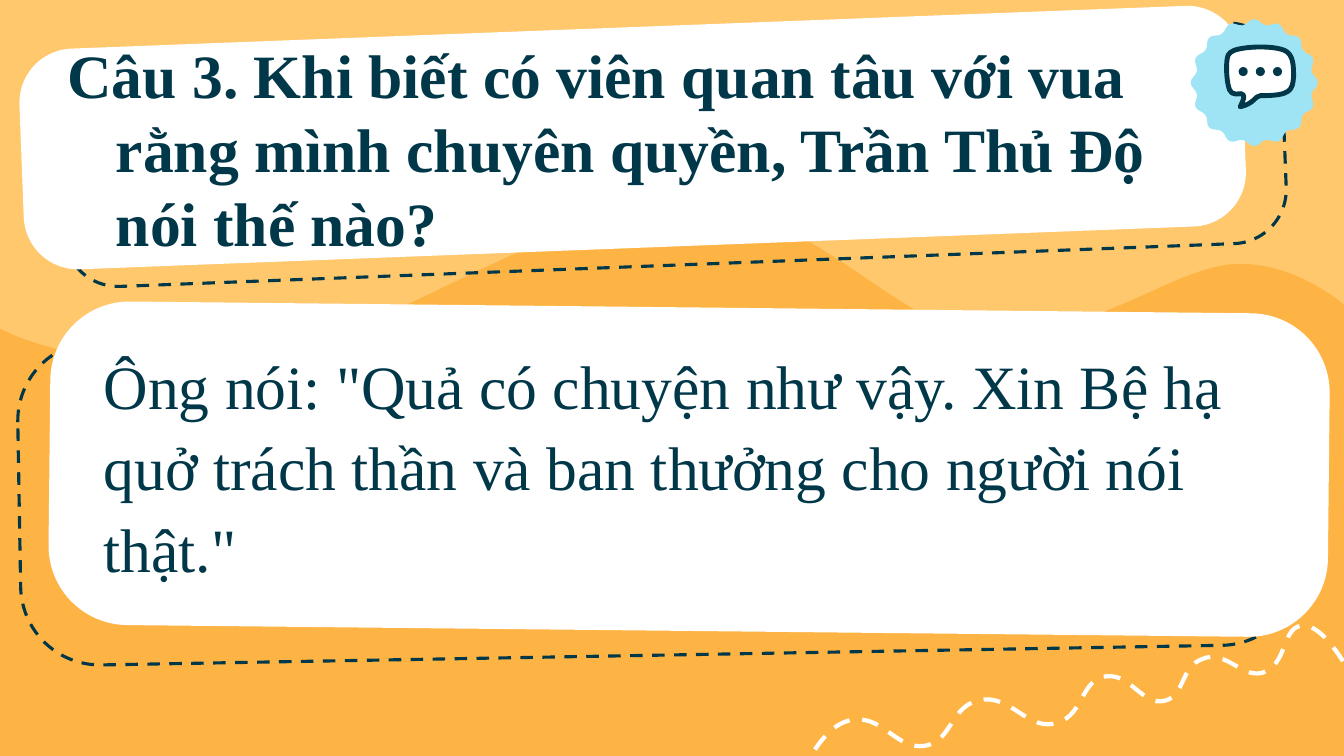
from math import cos, pi, sin

from lxml import etree
from pptx import Presentation
from pptx.dml.color import RGBColor
from pptx.enum.dml import MSO_LINE
from pptx.enum.shapes import MSO_SHAPE
from pptx.enum.text import MSO_ANCHOR
from pptx.oxml.ns import qn
from pptx.util import Inches, Pt

RECT, ROUND_RECT, OVAL = MSO_SHAPE.RECTANGLE, MSO_SHAPE.ROUNDED_RECTANGLE, MSO_SHAPE.OVAL
DASH = MSO_LINE.DASH
TOP, BOTTOM = MSO_ANCHOR.TOP, MSO_ANCHOR.BOTTOM

SAND = RGBColor(0xFF, 0xC8, 0x6D)
ORANGE = RGBColor(0xFE, 0xB4, 0x44)
NAVY = RGBColor(0x00, 0x38, 0x49)
SKY = RGBColor(0x9F, 0xE4, 0xF5)
WHITE = RGBColor(0xFF, 0xFF, 0xFF)

FONT = "Times New Roman"
WIDTH, HEIGHT = 13.33, 7.5

# Outlines: a start point, then (end) for a line or (control, control, end) for a curve
HILLS = [(6.81, 2.03),
         (5.43, 2.03, 3.58, 3.56, 2.16, 3.61), (2.06, 3.61, 1.97, 3.62, 1.89, 3.62),
         (0.64, 3.62, 0, 3.26, 0, 3.26), (0, 6.62), (WIDTH, 6.62), (WIDTH, 3.02),
         (13.33, 3.02, 12.86, 2.62, 12.33, 2.62), (12.29, 2.62, 12.25, 2.62, 12.22, 2.62),
         (11.64, 2.68, 11.11, 3.17, 10.06, 3.33), (10.01, 3.33, 9.95, 3.34, 9.9, 3.34),
         (8.92, 3.34, 8.12, 2.03, 6.81, 2.03)]
WAVE = [(13.32, 6.56),
        (13.2, 6.37, 13.04, 6.18, 12.9, 6.21), (12.73, 6.23, 12.76, 6.56, 12.56, 6.66),
        (12.33, 6.77, 12.17, 6.43, 11.92, 6.54), (11.71, 6.62, 11.75, 6.9, 11.56, 6.95),
        (11.34, 7.02, 11.22, 6.68, 10.97, 6.71), (10.72, 6.74, 10.75, 7.09, 10.49, 7.17),
        (10.19, 7.27, 10.03, 6.87, 9.7, 6.95), (9.42, 7.02, 9.44, 7.36, 9.17, 7.4),
        (8.9, 7.44, 8.76, 7.11, 8.48, 7.14), (8.27, 7.15, 8.11, 7.38, 8.02, 7.54)]
# Speech bubble, relative to the centre of the badge
BUBBLE = [(-0.2, -0.32),
          (-0.09, -0.36, 0.18, -0.37, 0.3, -0.32), (0.39, -0.28, 0.39, -0.16, 0.39, -0.06),
          (0.38, 0.08, 0.36, 0.13, 0.06, 0.13), (0.01, 0.13, 0, 0.21, -0.14, 0.24),
          (-0.11, 0.18, -0.08, 0.12, -0.13, 0.11), (-0.22, 0.12, -0.24, 0.11, -0.26, 0.02),
          (-0.28, -0.08, -0.28, -0.22, -0.26, -0.27), (-0.25, -0.29, -0.23, -0.31, -0.2, -0.32)]


def style(sp, fill=None, line=None, weight=2.25, dash=None):
    sp.shadow.inherit = False
    if fill is None:
        sp.fill.background()
    else:
        sp.fill.solid()
        sp.fill.fore_color.rgb = fill
    if line is None:
        sp.line.fill.background()
    else:
        sp.line.color.rgb = line
        sp.line.width = Pt(weight)
        sp.line.dash_style = dash
    return sp


def add_shape(s, kind, left, top, width, height, **look):
    sp = s.shapes.add_shape(kind, Inches(left), Inches(top), Inches(width), Inches(height))
    return style(sp, **look)


def add_outline(s, outline, closed=True, dx=0, dy=0, **look):
    """Freeform through the end points, whose curved parts become Bezier segments."""
    parts = [[(Inches(x + dx), Inches(y + dy)) for x, y in zip(part[::2], part[1::2])]
             for part in outline]
    builder = s.shapes.build_freeform(*parts[0][0], scale=1.0)
    builder.add_line_segments([part[-1] for part in parts[1:]], close=closed)
    sp = builder.convert_to_shape()
    segments = list(sp._element.iter(qn("a:lnTo")))
    for segment, part in zip(segments, parts[1:]):
        if len(part) == 3:
            curve = etree.Element(qn("a:cubicBezTo"))
            for x, y in part:
                etree.SubElement(curve, qn("a:pt"), x=str(x - sp.left), y=str(y - sp.top))
            segment.getparent().replace(segment, curve)
    return style(sp, **look)


def add_background(s):
    s.background.fill.solid()
    s.background.fill.fore_color.rgb = SAND
    add_outline(s, HILLS, fill=ORANGE)
    add_shape(s, RECT, 0, 6.14, WIDTH, HEIGHT - 6.14, fill=ORANGE)
    add_outline(s, WAVE, closed=False, line=WHITE, weight=3, dash=DASH)


def add_card(s, left, top, width, height, angle, dash_dx, dash_dy, dash_angle):
    """White tilted card over a dashed frame offset from it."""
    frame = dict(line=NAVY, dash=DASH)
    for x, y, turn, look in ((left + dash_dx, top + dash_dy, dash_angle, frame),
                             (left, top, angle, dict(fill=WHITE))):
        sp = add_shape(s, ROUND_RECT, x, y, width, height, **look)
        sp.adjustments[0] = 0.245
        sp.rotation = turn


def scalloped_rim(lobes=16, tip=0.63, valley=0.58, handle=0.05):
    """Tips and valleys in turn, joined by curves that leave them along the rim."""
    rim = []
    for i in range(2 * lobes + 1):
        angle = pi * i / lobes
        radius = valley if i % 2 else tip
        x, y = radius * cos(angle), radius * sin(angle)
        hx, hy = -handle * sin(angle), handle * cos(angle)
        rim.append((*leave, x - hx, y - hy, x, y) if rim else (x, y))
        leave = (x + hx, y + hy)
    return rim


def add_badge(s, cx, cy):
    """Scalloped badge with a speech bubble."""
    add_outline(s, scalloped_rim(), dx=cx, dy=cy, fill=SKY)
    add_outline(s, BUBBLE, dx=cx, dy=cy, fill=WHITE, line=NAVY, weight=3.5)
    size = 0.09
    for dot in (-1, 0, 1):
        add_shape(s, OVAL, cx + 0.06 + 0.17 * dot - size / 2, cy - 0.11 - size / 2,
                  size, size, fill=NAVY)


def add_text(s, left, top, width, height, text, anchor=TOP, inset=0.05,
             bold=False, spacing=1.0, margin=0, indent=0):
    tf = s.shapes.add_textbox(Inches(left), Inches(top),
                              Inches(width), Inches(height)).text_frame
    tf.word_wrap = True
    tf.vertical_anchor = anchor
    tf.margin_top = tf.margin_bottom = Inches(inset)
    p = tf.paragraphs[0]
    p.text = text
    p.line_spacing = spacing
    p.font.name, p.font.size, p.font.bold = FONT, Pt(44), bold
    p.font.color.rgb = NAVY
    pPr = p._p.get_or_add_pPr()
    pPr.set("marL", str(Inches(margin)))
    pPr.set("indent", str(Inches(indent)))


def main():
    prs = Presentation()
    prs.slide_width, prs.slide_height = Inches(WIDTH), Inches(HEIGHT)
    s = prs.slides.add_slide(prs.slide_layouts[6])
    add_background(s)

    # Cards: answer below, question above
    add_card(s, 0.49, 3.05, 12.69, 3.21, 0.6, -0.3, 0.24, 359)
    add_card(s, 0.21, 0.27, 12.13, 2.19, 357.8, 0.4, 0.17, 357.8)
    add_badge(s, 12.44, 0.82)

    # Question and answer
    add_text(s, 0.38, 0.33, 11.9, 2.34,
             "Câu 3. Khi biết có viên quan tâu với vua rằng mình chuyên quyền, "
             "Trần Thủ Độ nói thế nào?",
             anchor=BOTTOM, inset=0.1, bold=True, margin=0.67, indent=-0.48)
    add_text(s, 0.93, 3.33, 12.14, 2.85,
             'Ông nói: "Quả có chuyện như vậy. Xin Bệ hạ quở trách thần và ban '
             'thưởng cho người nói thật."', spacing=1.1)
    prs.save("out.pptx")


if __name__ == "__main__":
    main()
